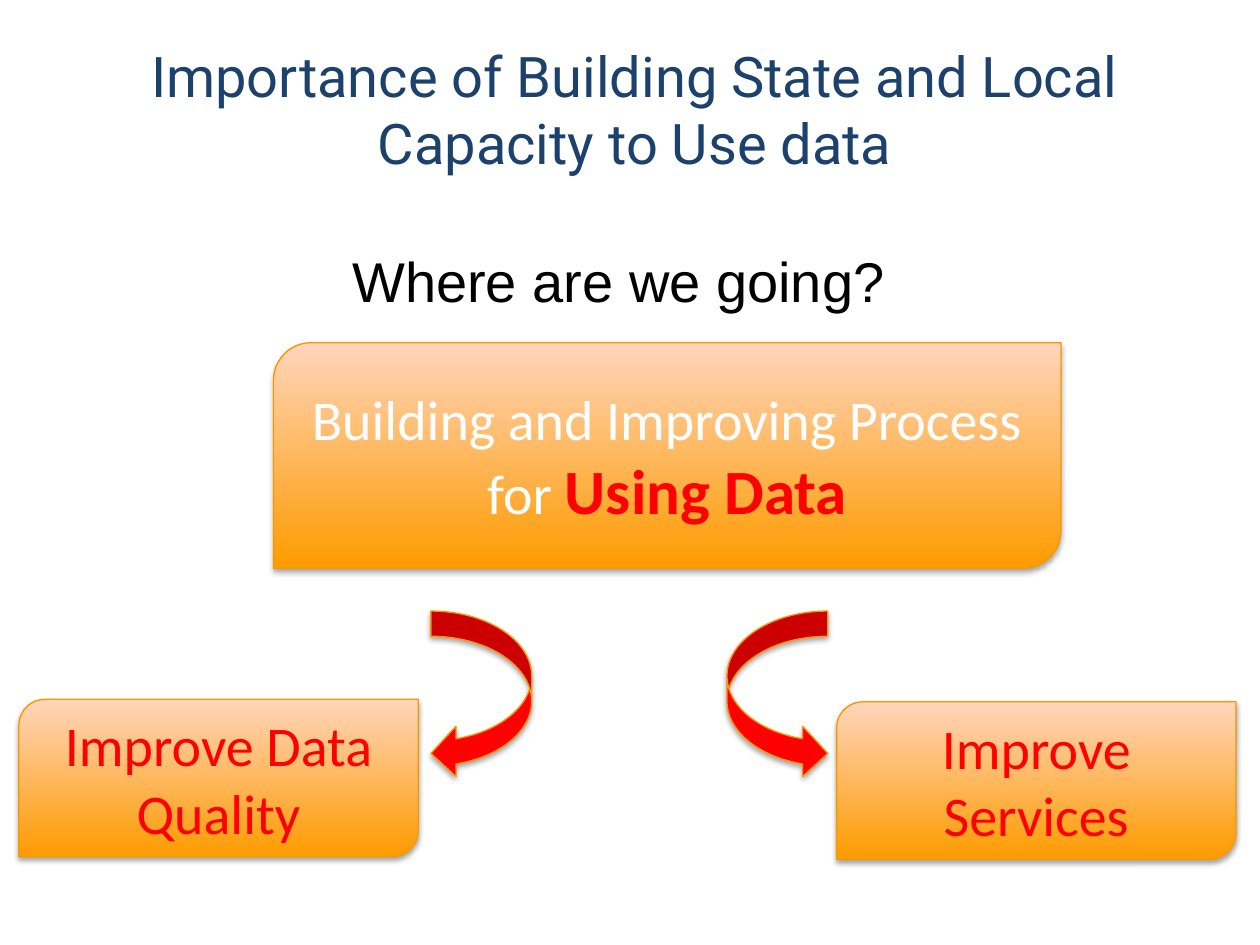
from lxml import etree
from pptx import Presentation
from pptx.dml.color import RGBColor
from pptx.enum.shapes import MSO_SHAPE
from pptx.enum.text import MSO_ANCHOR, PP_ALIGN
from pptx.oxml.ns import qn
from pptx.util import Inches, Pt

CARD = MSO_SHAPE.ROUND_2_DIAG_RECTANGLE
LEFT_ARROW = MSO_SHAPE.CURVED_LEFT_ARROW
RIGHT_ARROW = MSO_SHAPE.CURVED_RIGHT_ARROW
TOP, MIDDLE = MSO_ANCHOR.TOP, MSO_ANCHOR.MIDDLE
CENTER = PP_ALIGN.CENTER

COLORS = {"navy": "1B416C", "black": "000000", "white": "FFFFFF", "red": "FF0000",
          "orange": "FE9B00", "peach": "FFD5BC", "edge": "F89800"}

# Each run: text, font, size, colour, bold
HEADINGS = [
    ((0.54, 0.28, 9, 1.15),
     [("Importance of Building State and Local Capacity to Use data", "Roboto", 32, "navy", False)]),
    ((0.12, 1.91, 9.58, 0.6),
     [("Where are we going?", "Arial", 32, "black", False)]),
]
CARDS = [
    ((2.17, 2.72, 6.25, 1.79),
     [("Building and Improving Process for ", "Calibri", 32, "white", False),
      ("Using Data", "Calibri", 36, "red", True)]),
    ((0.15, 5.55, 3.17, 1.25), [("Improve Data Quality", "Calibri", 32, "red", False)]),
    ((6.64, 5.57, 3.17, 1.25), [("Improve Services", "Calibri", 32, "red", False)]),
]
ARROWS = [(RIGHT_ARROW, (5.77, 4.85, 0.8, 1.33)), (LEFT_ARROW, (3.42, 4.85, 0.8, 1.33))]


def rgb(name):
    return RGBColor.from_string(COLORS[name])


def write(sp, runs, anchor):
    tf = sp.text_frame
    tf.word_wrap = True
    tf.vertical_anchor = anchor
    p = tf.paragraphs[0]
    p.alignment = CENTER
    for text, font, size, color, bold in runs:
        r = p.add_run()
        r.text = text
        for key, value in {"name": font, "size": Pt(size), "bold": bold}.items():
            setattr(r.font, key, value)
        r.font.color.rgb = rgb(color)


def add_outlined(slide, kind, box):
    """Add a shape with the thin orange outline and soft shadow below it."""
    sp = slide.shapes.add_shape(kind, *map(Inches, box))
    sp.line.color.rgb = rgb("edge")
    sp.line.width = Pt(0.75)
    sp.shadow.inherit = False
    effects = sp._element.spPr.find(qn("a:effectLst"))
    shadow = etree.SubElement(effects, qn("a:outerShdw"), blurRad=str(Pt(3.1)),
                              dist=str(Pt(1.8)), dir="5400000", rotWithShape="0")
    color = etree.SubElement(shadow, qn("a:srgbClr"), val=COLORS["black"])
    etree.SubElement(color, qn("a:alpha"), val="35000")
    return sp


def main():
    prs = Presentation()
    prs.slide_width, prs.slide_height = Inches(10), Inches(7.5)
    slide = prs.slides.add_slide(prs.slide_layouts[6])

    for box, runs in HEADINGS:
        write(slide.shapes.add_textbox(*map(Inches, box)), runs, TOP)

    for box, runs in CARDS:
        sp = add_outlined(slide, CARD, box)
        sp.fill.gradient()
        sp.fill.gradient_angle = 90
        for stop, color, position in zip(sp.fill.gradient_stops, ("orange", "peach"), (0, 1)):
            stop.color.rgb = rgb(color)
            stop.position = position
        write(sp, runs, MIDDLE)

    for kind, box in ARROWS:
        sp = add_outlined(slide, kind, box)
        sp.fill.solid()
        sp.fill.fore_color.rgb = rgb("red")

    prs.save("out.pptx")


if __name__ == "__main__":
    main()
